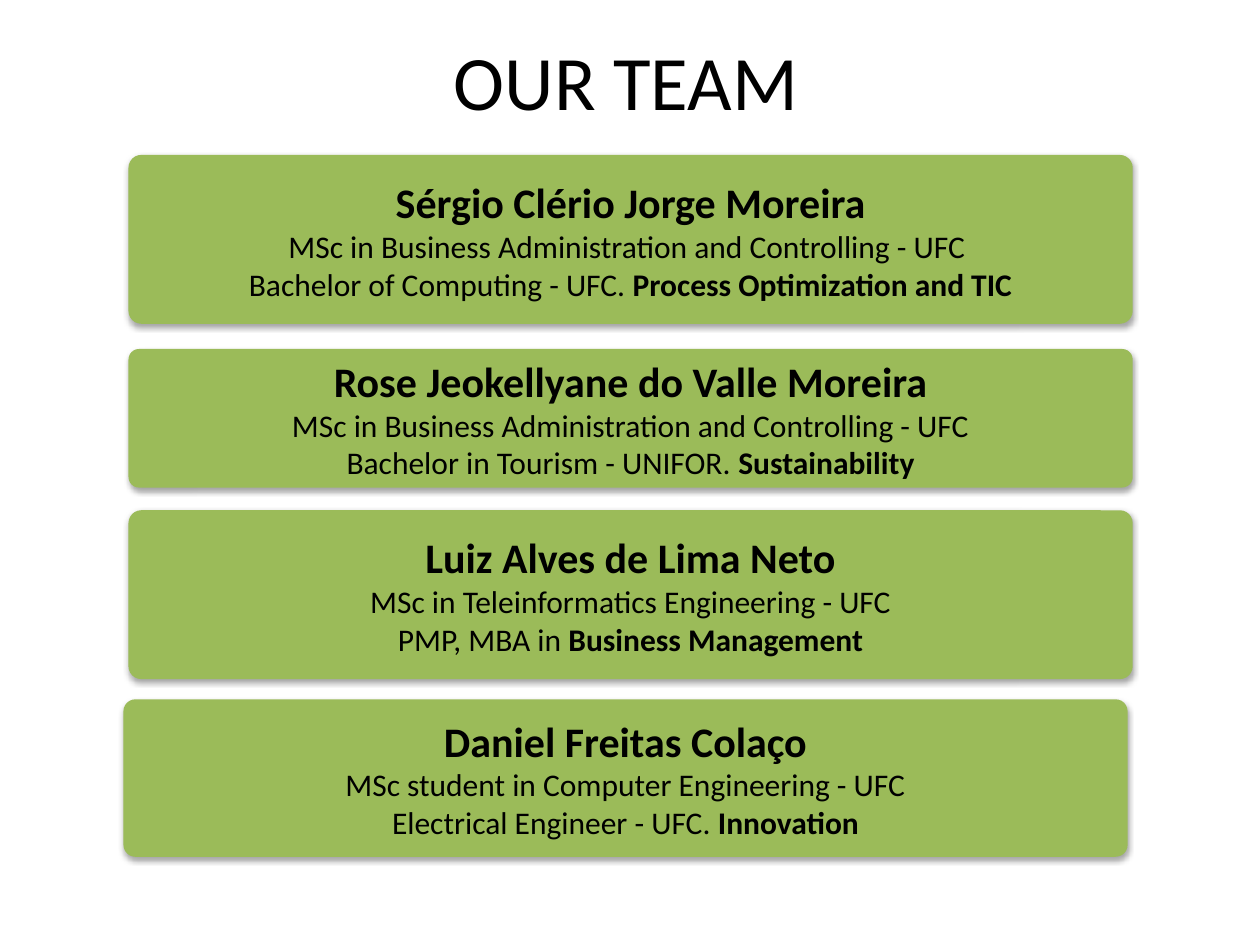
"""Build the team slide: a title above four cards with names and qualifications."""
from dataclasses import dataclass

from lxml import etree
from pptx import Presentation
from pptx.dml.color import RGBColor
from pptx.enum.shapes import MSO_SHAPE
from pptx.enum.text import MSO_ANCHOR, PP_ALIGN
from pptx.oxml.ns import qn
from pptx.util import Inches, Pt

ROUNDED = MSO_SHAPE.ROUNDED_RECTANGLE
MIDDLE = MSO_ANCHOR.MIDDLE
CENTER = PP_ALIGN.CENTER


@dataclass(frozen=True)
class Theme:
    font: str = "Calibri"
    text: RGBColor = RGBColor(0x00, 0x00, 0x00)
    card: RGBColor = RGBColor(0x9B, 0xBB, 0x59)
    shadow: str = "000000"
    title_size: int = 44
    name_size: int = 24
    detail_size: int = 18


THEME = Theme()


def add_text(paragraph, text, *, size, bold=False):
    paragraph.alignment = CENTER
    run = paragraph.add_run()
    run.text = text
    run.font.name = THEME.font
    run.font.size = Pt(size)
    run.font.bold = bold
    run.font.color.rgb = THEME.text


def add_shadow(shape):
    shape.shadow.inherit = False
    effects = shape._element.spPr.find(qn("a:effectLst"))
    shadow = etree.SubElement(
        effects, qn("a:outerShdw"), blurRad=str(Pt(3.1)), dist=str(Pt(1.8)),
        dir="5400000", rotWithShape="0",
    )
    color = etree.SubElement(shadow, qn("a:srgbClr"), val=THEME.shadow)
    etree.SubElement(color, qn("a:alpha"), val="35000")


CARD_WIDTH = 7.97
TEAM = [
    (1.02, 1.23, 1.34, "Sérgio Clério Jorge Moreira",
     "MSc in Business Administration and Controlling - UFC ",
     "Bachelor of Computing - UFC. ", "Process Optimization and TIC"),
    (1.02, 2.77, 1.1, "Rose Jeokellyane do Valle Moreira",
     "MSc in Business Administration and Controlling - UFC",
     "Bachelor in Tourism - UNIFOR. ", "Sustainability"),
    (1.02, 4.05, 1.34, "Luiz Alves de Lima Neto",
     "MSc in Teleinformatics Engineering - UFC",
     "PMP, MBA in ", "Business Management"),
    (0.98, 5.55, 1.25, "Daniel Freitas Colaço",
     "MSc student in Computer Engineering - UFC",
     "Electrical Engineer - UFC. ", "Innovation"),
]

presentation = Presentation()
presentation.slide_width = Inches(10)
presentation.slide_height = Inches(7.5)
slide = presentation.slides.add_slide(presentation.slide_layouts[6])

for left, top, height, name, degree, background, specialty in TEAM:
    card = slide.shapes.add_shape(
        ROUNDED, Inches(left), Inches(top), Inches(CARD_WIDTH), Inches(height)
    )
    card.adjustments[0] = 0.076
    card.fill.solid()
    card.fill.fore_color.rgb = THEME.card
    card.line.fill.background()
    add_shadow(card)
    frame = card.text_frame
    frame.word_wrap = False
    frame.vertical_anchor = MIDDLE
    add_text(frame.paragraphs[0], name, size=THEME.name_size, bold=True)
    add_text(frame.add_paragraph(), degree, size=THEME.detail_size)
    last_line = frame.add_paragraph()
    add_text(last_line, background, size=THEME.detail_size)
    add_text(last_line, specialty, size=THEME.detail_size, bold=True)

title = slide.shapes.add_textbox(Inches(1.38), Inches(0.01), Inches(7.18), Inches(1.25))
title.text_frame.word_wrap = True
title.text_frame.vertical_anchor = MIDDLE
add_text(title.text_frame.paragraphs[0], "OUR TEAM", size=THEME.title_size)

presentation.save("out.pptx")
